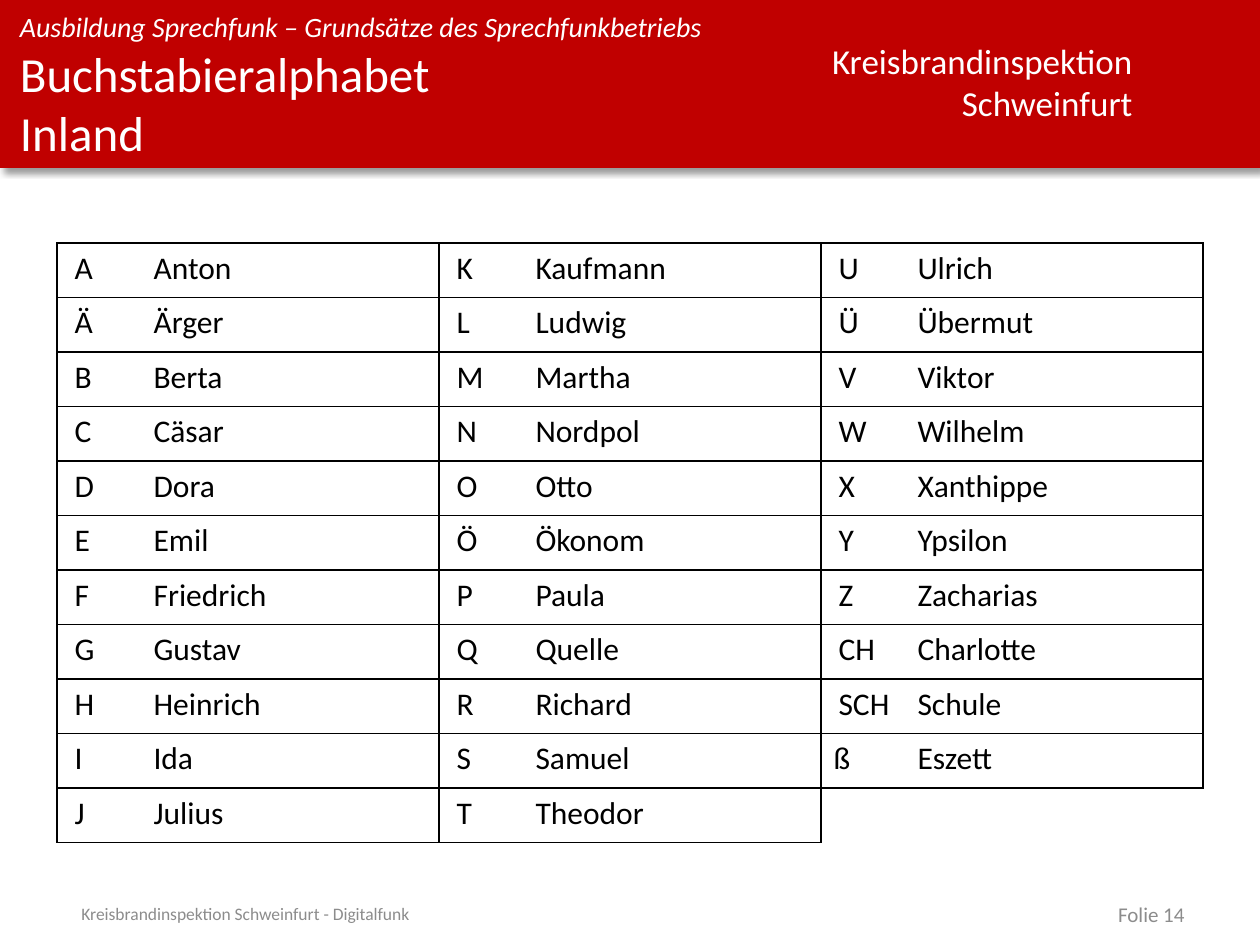
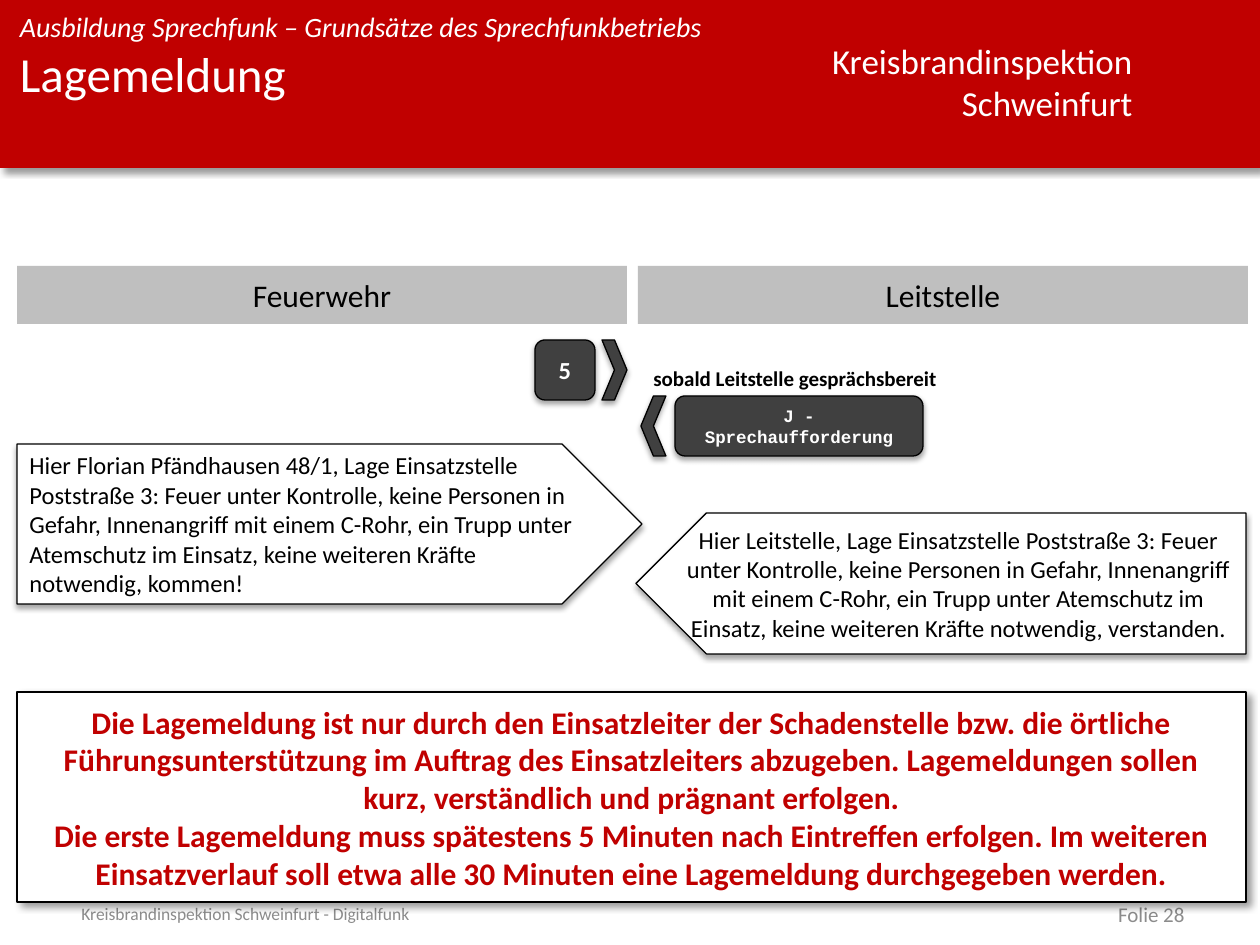
import pptx
import pptx.dml.color
import pptx.enum.shapes
import pptx.enum.text
import pptx.oxml
import pptx.oxml.ns
import pptx.util

Pt = pptx.util.Pt
RGB = pptx.dml.color.RGBColor.from_string
KIND = pptx.enum.shapes.MSO_SHAPE
ALIGN = pptx.enum.text.PP_ALIGN
ANCHOR = pptx.enum.text.MSO_ANCHOR
NS = pptx.oxml.ns.nsdecls("a")

COLORS = {
    "red": "C00000",
    "white": "FFFFFF",
    "black": "000000",
    "dark": "404040",
    "band": "BFBFBF",
    "foot": "8C8C8C",
}
SCALE = 914400 / 126  # EMU per px
# Shadows: opacity in percent, blur and distance in pt, direction in degrees
DEEP = (40, 4, 3, 45)
SOFT = (35, 3.1, 1.8, 90)


def px(num):
    return pptx.util.Emu(round(num * SCALE))


def draw(slide, box, lines=(), size=12, color="black", kind=None, fill=None,
         edge=False, shade=None, flip=False, align=ALIGN.LEFT, mid=False,
         inset=None, wrap=True, bold=False, italic=False, font="Calibri"):
    """Add a preset shape, or a text box if kind is None; lines are paragraphs."""
    place = [px(num) for num in box]
    if kind is None:
        shape = slide.shapes.add_textbox(*place)
    else:
        shape = slide.shapes.add_shape(kind, *place)
        shape.fill.solid()
        shape.fill.fore_color.rgb = RGB(COLORS[fill])
        if edge:
            shape.line.color.rgb = RGB(COLORS["black"])
            shape.line.width = Pt(0.75)
        else:
            shape.line.fill.background()
        shape.shadow.inherit = False
        if shade:
            alpha, blur, dist, angle = shade
            effects = shape.element.spPr.find(pptx.oxml.ns.qn("a:effectLst"))
            effects.append(pptx.oxml.parse_xml(
                f'<a:outerShdw {NS} blurRad="{Pt(blur)}" dist="{Pt(dist)}" '
                f'dir="{angle * 60000}" algn="t" rotWithShape="0">'
                f'<a:srgbClr val="{COLORS["black"]}"><a:alpha val="{alpha * 1000}"/>'
                '</a:srgbClr></a:outerShdw>'))
        if flip:
            shape.element.spPr.xfrm.set("flipH", "1")

    frame = shape.text_frame
    frame.word_wrap = wrap
    frame.vertical_anchor = ANCHOR.MIDDLE if mid else ANCHOR.TOP
    if inset is not None:
        frame.margin_left = frame.margin_right = px(inset)
        frame.margin_top = frame.margin_bottom = px(inset)
    for idx, line in enumerate(lines):
        para = frame.add_paragraph() if idx else frame.paragraphs[0]
        para.alignment = align
        for part, words in enumerate(line.split("\n")):
            if part:
                para.add_line_break()
            run = para.add_run()
            run.text = words
            run.font.name = font
            run.font.size = Pt(size)
            run.font.bold = bold
            run.font.italic = italic
            run.font.color.rgb = RGB(COLORS[color])


deck = pptx.Presentation()
deck.slide_width = px(1260)
deck.slide_height = px(945)

# Header and footer of every slide
slides = []
for title, number in [("Buchstabieralphabet\nInland", 14), ("Lagemeldung", 28)]:
    slide = deck.slides.add_slide(deck.slide_layouts[6])
    draw(slide, (0, 0, 1260, 168), kind=KIND.RECTANGLE, fill="red", shade=DEEP)
    draw(slide, (816, 33, 329, 97), ["Kreisbrandinspektion", "Schweinfurt"], 20,
         "white", align=ALIGN.RIGHT, wrap=False)
    draw(slide, (20, 10, 796, 34),
         ["Ausbildung Sprechfunk – Grundsätze des Sprechfunkbetriebs"], 16,
         "white", inset=0, italic=True)
    draw(slide, (20, 44, 796, 124), [title], 28, "white", inset=0)
    draw(slide, (69, 901, 761, 26),
         ["Kreisbrandinspektion Schweinfurt - Digitalfunk"], 10, "foot", mid=True)
    draw(slide, (903, 901, 294, 26), [f"Folie {number}"], 12, "foot",
         align=ALIGN.RIGHT, mid=True)
    slides.append(slide)
spell, report = slides

# Spelling alphabet: three pairs of letter and word columns
WORDS = [
    "A Anton,Ä Ärger,B Berta,C Cäsar,D Dora,E Emil,F Friedrich,G Gustav,"
    "H Heinrich,I Ida,J Julius",
    "K Kaufmann,L Ludwig,M Martha,N Nordpol,O Otto,Ö Ökonom,P Paula,Q Quelle,"
    "R Richard,S Samuel,T Theodor",
    "U Ulrich,Ü Übermut,V Viktor,W Wilhelm,X Xanthippe,Y Ypsilon,Z Zacharias,"
    "CH Charlotte,SCH Schule,ß Eszett",
]
ROWS = 11
table = spell.shapes.add_table(ROWS, 6, px(57), px(243), px(1146), px(600)).table
table.first_row = False
table.horz_banding = False
for row in table.rows:
    row.height = px(600 / ROWS)
for idx, col in enumerate(table.columns):
    col.width = px(298 if idx % 2 else 84)

for block, text in enumerate(WORDS):
    pairs = [entry.split() for entry in text.split(",")]
    for row in range(ROWS):
        full = row < len(pairs)
        for side in range(2):
            cell = table.cell(row, 2 * block + side)
            cell.fill.background()
            para = cell.text_frame.paragraphs[0]
            para.font.size = Pt(18)
            if full:
                run = para.add_run()
                run.text = pairs[row][side]
                run.font.name = "Calibri"
                run.font.size = Pt(18)
                run.font.color.rgb = RGB(COLORS["black"])
                if side == 0 and run.text != "ß":
                    props = para._p.get_or_add_pPr()
                    props.set("marL", str(px(5)))
                    props.set("indent", "0")
            if full:
                shown = "RTB" if side else "LTB"
            else:
                shown = "T" if side else "LT"
            for pos, edge in enumerate("LRTB"):
                paint = (f'<a:solidFill><a:srgbClr val="{COLORS["black"]}"/></a:solidFill>'
                         if edge in shown else "<a:noFill/>")
                cell._tc.tcPr.insert(pos, pptx.oxml.parse_xml(
                    f'<a:ln{edge} {NS} w="{Pt(1)}">{paint}</a:ln{edge}>'))

# Situation report: radio exchange between two parties
for left, name in [(17, "Feuerwehr"), (638, "Leitstelle")]:
    draw(report, (left, 266, 610, 58), [name], 18, kind=KIND.RECTANGLE,
         fill="band", align=ALIGN.CENTER, inset=10, wrap=False)

key = dict(fill="dark", edge=True, shade=SOFT, align=ALIGN.CENTER, mid=True,
           color="white", bold=True)
draw(report, (535, 340, 60, 60), ["5"], 14, kind=KIND.ROUNDED_RECTANGLE, **key)
draw(report, (602, 340, 25, 60), kind=KIND.CHEVRON, **key)
draw(report, (641, 396, 25, 60), kind=KIND.CHEVRON, flip=True, **key)
draw(report, (675, 396, 248, 60), ["J - Sprechaufforderung"], 10,
     kind=KIND.ROUNDED_RECTANGLE, font="Courier New", **key)
draw(report, (641, 359, 318, 38), ["sobald Leitstelle gesprächsbereit"], 12,
     bold=True, wrap=False)

STATE = ("Lage Einsatzstelle Poststraße 3: Feuer unter Kontrolle, keine Personen "
         "in Gefahr, Innenangriff mit einem C-Rohr, ein Trupp unter Atemschutz im "
         "Einsatz, keine weiteren Kräfte notwendig")
panel = dict(fill="white", edge=True, mid=True)
draw(report, (17, 444, 625, 160), [f"Hier Florian Pfändhausen 48/1, {STATE}, kommen!"],
     14, kind=KIND.PENTAGON, shade=SOFT, **panel)
draw(report, (636, 513, 610, 141), [f"Hier Leitstelle, {STATE}, verstanden."],
     14, kind=KIND.PENTAGON, shade=SOFT, flip=True, align=ALIGN.CENTER, **panel)

RULES = [
    "Die Lagemeldung ist nur durch den Einsatzleiter der Schadenstelle bzw. die "
    "örtliche Führungsunterstützung im Auftrag des Einsatzleiters abzugeben. "
    "Lagemeldungen sollen kurz, verständlich und prägnant erfolgen.",
    "Die erste Lagemeldung muss spätestens 5 Minuten nach Eintreffen erfolgen. Im "
    "weiteren Einsatzverlauf soll etwa alle 30 Minuten eine Lagemeldung "
    "durchgegeben werden.",
]
draw(report, (17, 692, 1229, 210), RULES, 18, "red", kind=KIND.RECTANGLE,
     shade=DEEP, align=ALIGN.CENTER, bold=True, **panel)

deck.save("out.pptx")
